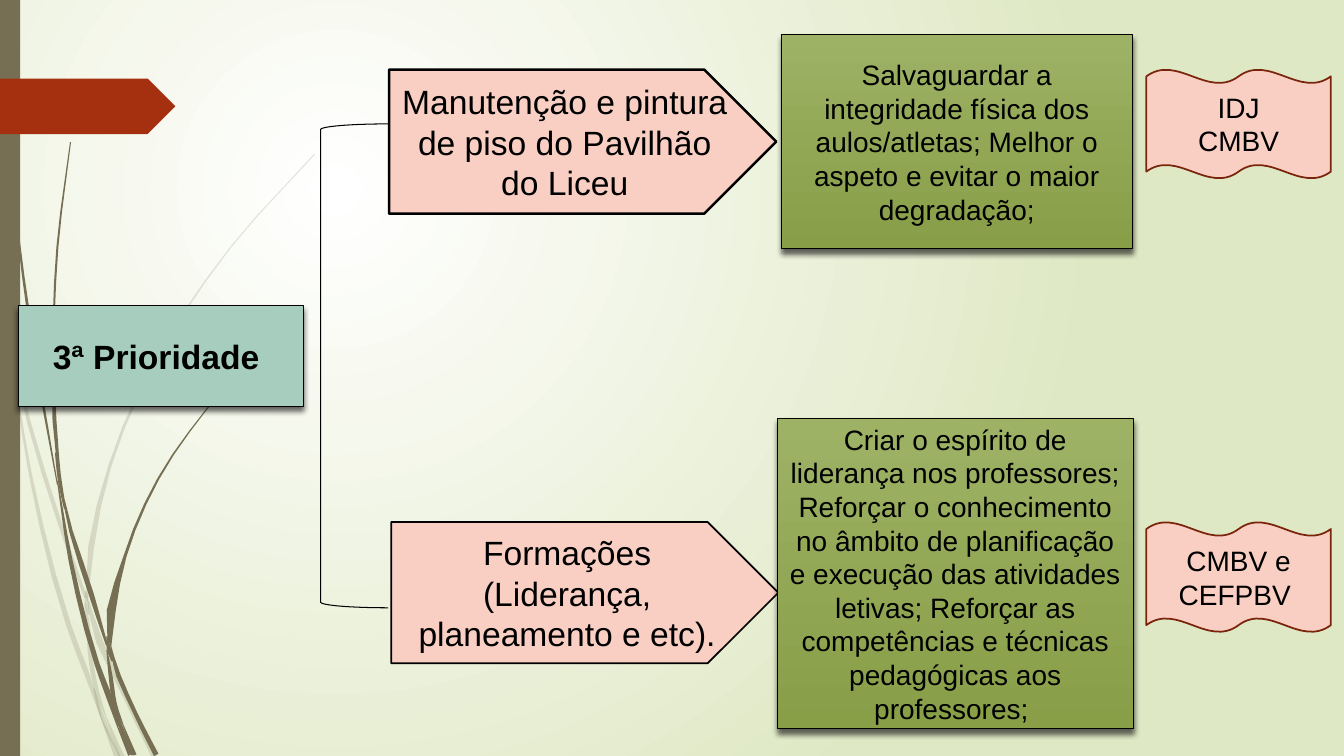
from math import dist, hypot

from lxml import etree
from pptx import Presentation
from pptx.dml.color import RGBColor
from pptx.enum.shapes import MSO_SHAPE
from pptx.enum.text import MSO_ANCHOR, PP_ALIGN
from pptx.oxml import parse_xml
from pptx.oxml.ns import nsdecls, qn
from pptx.util import Pt

PX = 9144
PAGE_WIDTH, PAGE_HEIGHT = 1333, 750
CURVE_STEPS = 3
FONT = "Arial"
RECTANGLE = MSO_SHAPE.RECTANGLE
ARROW = MSO_SHAPE.PENTAGON
WAVE = MSO_SHAPE.DOUBLE_WAVE
BRACKET = MSO_SHAPE.LEFT_BRACKET
CENTER = PP_ALIGN.CENTER
MIDDLE = MSO_ANCHOR.MIDDLE

WHITE = RGBColor(0xFF, 0xFF, 0xFF)
BLACK = RGBColor(0, 0, 0)
PALE_GREEN = RGBColor(0xDF, 0xE8, 0xC4)
OLIVE = RGBColor(0x76, 0x6F, 0x54)
RUST = RGBColor(0xA5, 0x30, 0x10)
DARK_RUST = RGBColor(0x7A, 0x24, 0x0C)
PINK = RGBColor(0xF9, 0xCF, 0xC3)
TEAL = RGBColor(0xA6, 0xCD, 0xBD)
LIGHT_GREEN = RGBColor(0x9D, 0xB2, 0x65)
DEEP_GREEN = RGBColor(0x88, 0x9E, 0x47)

# Each blade is a row of (x, y, thickness) knots from top to bottom.
FAINT_BLADES = [
    [(0, 290, 4), (5, 317, 2), (11, 350, 1)],
    [(14, 345, 1), (17, 365, 2), (60, 521, 4), (85, 593, 3)],
    [(88, 596, 1), (90, 608, 4), (125, 693, 4), (153, 751, 5)],
    [(105, 711, 1), (121, 751, 5)],
    [(11, 350, 1), (30, 470, 3), (68, 620, 5), (93, 688, 4), (101, 714, 1)],
    [(84, 599, 1), (87, 615, 3), (89, 646, 4), (96, 685, 4), (105, 711, 1)],
    [(312, 153, 1), (229, 245, 1), (159, 349, 2), (109, 462, 3), (87, 584, 3), (87, 596, 1)],
    [(101, 714, 1), (116, 751, 5)],
    [(85, 586, 1), (86, 598, 4), (88, 610, 1)],
    [(93, 683, 1), (101, 710, 4), (119, 751, 1)],
]
STRONG_BLADES = [
    [(4, 0, 1), (6, 68, 1), (8, 110, 1), (18, 233, 2), (35, 355, 3), (57, 481, 1)],
    [(60, 472, 1), (63, 495, 2), (91, 591, 5), (106, 640, 2)],
    [(110, 641, 1), (112, 652, 3), (134, 707, 4), (155, 749, 5)],
    [(57, 477, 1), (70, 556, 4), (96, 658, 5), (111, 700, 5), (117, 722, 1)],
    [(70, 141, 1), (57, 245, 2), (53, 349, 2), (57, 451, 3), (60, 472, 1)],
    [(122, 719, 1), (134, 749, 3)],
    [(55, 449, 1), (59, 477, 3), (64, 505, 1)],
    [(260, 344, 1), (205, 406, 1), (157, 475, 2), (124, 552, 3), (109, 632, 5), (110, 641, 1)],
    [(117, 722, 1), (129, 749, 4)],
    [(106, 645, 1), (110, 673, 4), (114, 699, 4), (122, 719, 1)],
    [(106, 631, 1), (108, 644, 4), (111, 656, 1)],
    [(110, 691, 1), (117, 714, 4), (132, 749, 3)],
]

ROWS = [
    (((386, 69, 384, 143), "Manutenção e pintura de piso do Pavilhão do Liceu", 1.75),
     ((775, 34, 348, 213), "Salvaguardar a integridade física dos aulos/atletas; "
      "Melhor o aspeto e evitar o maior degradação;"),
     ((1137, 69, 183, 108), "IDJ\nCMBV")),
    (((388, 518, 384, 140), "Formações (Liderança, planeamento e etc).", 1.25),
     ((771, 415, 353, 308), "Criar o espírito de liderança nos professores; Reforçar o "
      "conhecimento no âmbito de planificação e execução das atividades letivas; "
      "Reforçar as competências e técnicas pedagógicas aos professores; "),
     ((1137, 518, 183, 109), "CMBV e CEFPBV ")),
]


def paint(shape, fill, line=None, line_width=0.75):
    shape.shadow.inherit = False
    if fill is None:
        shape.fill.background()
    else:
        shape.fill.solid()
        shape.fill.fore_color.rgb = fill
    if line is None:
        shape.line.fill.background()
    else:
        shape.line.color.rgb = line
        shape.line.width = Pt(line_width)


def add_block(page, kind, box, *colors):
    shape = page.shapes.add_shape(kind, *(length * PX for length in box))
    paint(shape, *colors)
    return shape


def write(shape, text, size, bold=False):
    frame = shape.text_frame
    frame.word_wrap = True
    frame.vertical_anchor = MIDDLE
    frame.text = text
    for para in frame.paragraphs:
        para.alignment = CENTER
        para.font.name = FONT
        para.font.size = Pt(size)
        para.font.bold = bold
        para.font.color.rgb = BLACK


def cast_shadow(shape):
    shape._element.spPr.find(qn("a:effectLst")).append(parse_xml(
        f'<a:outerShdw {nsdecls("a")} blurRad="50800" dist="38100" dir="5400000" '
        'rotWithShape="0"><a:srgbClr val="000000"><a:alpha val="60000"/>'
        '</a:srgbClr></a:outerShdw>'))


def set_gradient(fill, first, last):
    fill.gradient()
    for stop, color in zip(fill.gradient_stops, (first, last)):
        stop.color.rgb = color


def set_background(page):
    set_gradient(page.background.fill, WHITE, PALE_GREEN)
    gradient = page._element.find(".//" + qn("a:gradFill"))
    gradient.replace(gradient.find(qn("a:lin")), parse_xml(
        f'<a:path {nsdecls("a")} path="circle">'
        '<a:fillToRect l="50000" t="50000" r="100000" b="100000"/></a:path>'))


def smooth(knots):
    spans = [dist(a, b) for a, b in zip(knots, knots[1:])]
    chords = [[(q - p) / span for p, q in zip(a, b)]
              for a, b, span in zip(knots, knots[1:], spans)]
    inner = [[(p * after + q * before) / (before + after) for p, q in zip(c, d)]
             for c, d, before, after in zip(chords, chords[1:], spans, spans[1:])]
    slopes = [chords[0], *inner, chords[-1]]
    points = []
    for a, b, m, n, span in zip(knots, knots[1:], slopes, slopes[1:], spans):
        for t in (step / CURVE_STEPS for step in range(CURVE_STEPS)):
            ease = t * t * (3 - 2 * t)
            points.append([p + (q - p) * ease + span * t * (1 - t) * (u * (1 - t) - v * t)
                           for p, q, u, v in zip(a, b, m, n)])
    return points + [knots[-1]]


def add_blade(page, knots, opacity):
    points = smooth(knots)
    left, right = [], []
    for before, (x, y, thickness), after in zip(
            points[:1] + points, points, points[1:] + points[-1:]):
        dx, dy = after[0] - before[0], after[1] - before[1]
        reach = thickness / 2 / hypot(dx, dy)
        left.append(((x + dy * reach) * PX, (y - dx * reach) * PX))
        right.append(((x - dy * reach) * PX, (y + dx * reach) * PX))
    outline = left + right[::-1]
    builder = page.shapes.build_freeform(*outline[0])
    builder.add_line_segments(outline[1:], close=True)
    blade = builder.convert_to_shape()
    paint(blade, OLIVE)
    color = blade._element.spPr.find(qn("a:solidFill"))[0]
    etree.SubElement(color, qn("a:alpha")).set("val", str(opacity * 1000))


def draw_backdrop(page):
    set_background(page)
    for blades, opacity in ((FAINT_BLADES, 20), (STRONG_BLADES, 100)):
        for knots in blades:
            add_blade(page, knots, opacity)
    add_block(page, RECTANGLE, (0, 0, 20, PAGE_HEIGHT), OLIVE)
    add_block(page, ARROW, (0, 78, 174, 55), RUST)


def draw_priority(page, box):
    left, top, width, height = box
    label = add_block(page, RECTANGLE, box, TEAL, BLACK)
    cast_shadow(label)
    write(label, "3ª Prioridade ", 24, bold=True)
    add_block(page, BRACKET, (left + width + 17, top - 180, 67, 480), None, BLACK)


def draw_row(page, action, goal, partner):
    box, text, line_width = action
    write(add_block(page, ARROW, box, PINK, BLACK, line_width), text, 24)
    box, text = goal
    panel = add_block(page, RECTANGLE, box, LIGHT_GREEN, BLACK)
    set_gradient(panel.fill, LIGHT_GREEN, DEEP_GREEN)
    panel.fill.gradient_angle = 270
    cast_shadow(panel)
    write(panel, text, 20)
    box, text = partner
    write(add_block(page, WAVE, box, PINK, DARK_RUST, 1.25), text, 20)


deck = Presentation()
deck.slide_width, deck.slide_height = PAGE_WIDTH * PX, PAGE_HEIGHT * PX
sheet = deck.slides.add_slide(deck.slide_layouts[6])
draw_backdrop(sheet)
draw_priority(sheet, (18, 303, 283, 100))
for row in ROWS:
    draw_row(sheet, *row)
deck.save("out.pptx")
